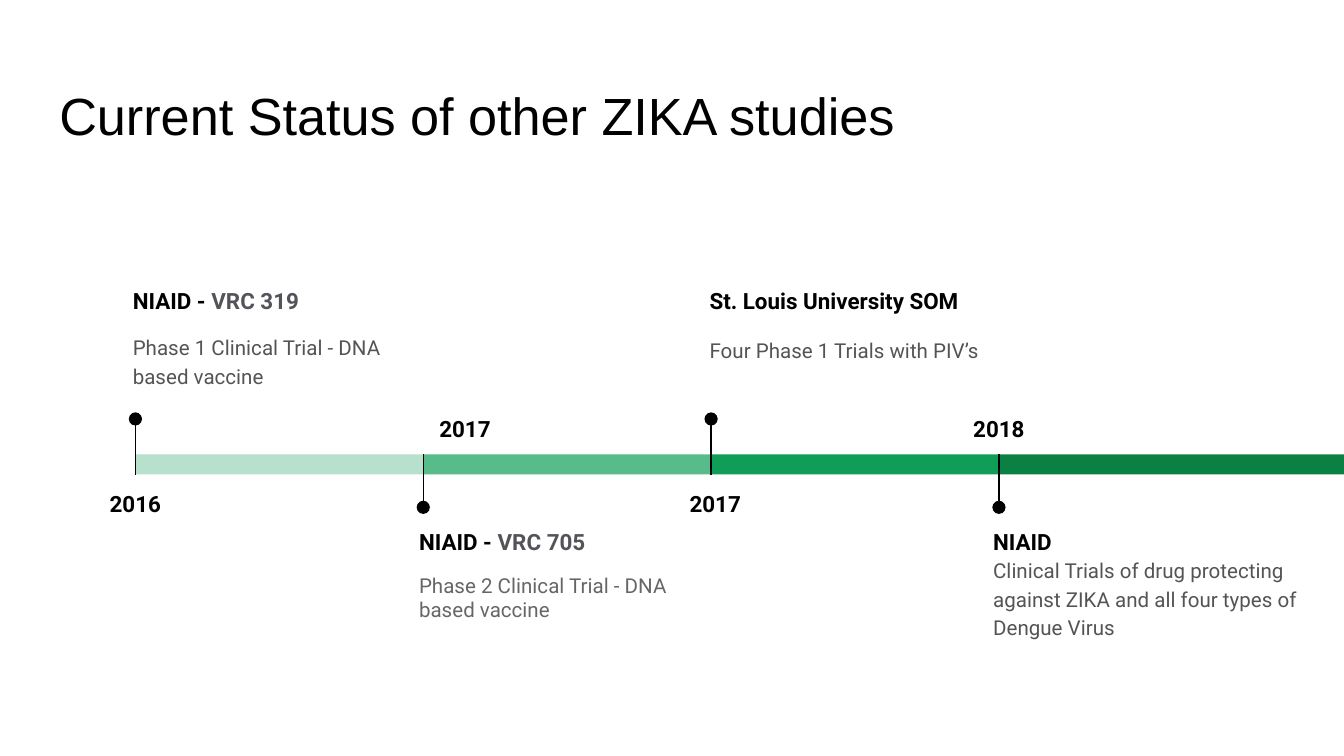
from lxml.etree import SubElement
from pptx import Presentation
from pptx.dml.color import RGBColor
from pptx.enum.shapes import MSO_CONNECTOR, MSO_SHAPE
from pptx.enum.text import MSO_ANCHOR, PP_ALIGN
from pptx.oxml.ns import qn
from pptx.util import Cm, Pt

COLORS = {
    "black": "000000", "study": "545359", "body": "545454", "pale_body": "666666",
    "mint": "B7E1CD", "sage": "57BB8A", "green": "0F9D58", "forest": "0B8043",
}
HEADING = {"name": "Roboto", "size": Pt(12), "bold": True}
BODY = {"name": "Roboto", "size": Pt(11), "bold": False}
YEAR_PARAGRAPH = {"alignment": PP_ALIGN.CENTER, "line_spacing": 1.15, "space_after": Pt(16)}
WIDTH, HEIGHT = 25.4, 14.29
LEFT, STEP = 2.56, 5.44
BAR_TOP, BAR_HEIGHT = 8.59, 0.38
STEM, DOT = 1, 0.25

STAGES = [
    {"color": "mint", "above": True, "year": "2016", "year_shift": 0, "year_width": 2.41,
     "card_shift": -0.3, "card_width": 6.25, "heading": "NIAID - ", "study": "VRC 319",
     "body": "Phase 1 Clinical Trial - DNA based vaccine", "body_color": "body",
     "format": {"line_spacing": 1.15, "space_before": Pt(9.5)}},
    {"color": "sage", "above": False, "year": "2017", "year_shift": 0.79, "year_width": 3.61,
     "card_shift": -0.33, "card_width": 5.66, "heading": "NIAID - ", "study": "VRC 705",
     "body": "Phase 2 Clinical Trial - DNA based vaccine", "body_color": "pale_body",
     "format": {"space_before": Pt(9.5), "space_after": Pt(16)}},
    {"color": "green", "above": True, "year": "2017", "year_shift": 0.08, "year_width": 1.93,
     "card_shift": -0.28, "card_width": 6.25, "heading": "St. Louis University SOM", "study": "",
     "body": "Four Phase 1 Trials with PIV’s", "body_color": "body",
     "format": {"line_spacing": 1.15, "space_before": Pt(11)}},
    {"color": "forest", "above": False, "year": "2018", "year_shift": 0, "year_width": 2.08,
     "card_shift": -0.36, "card_width": 6.25, "heading": "NIAID", "study": "",
     "body": "Clinical Trials of drug protecting against ZIKA and all four types of Dengue Virus",
     "body_color": "body", "format": {"line_spacing": 1.15}},
]


def apply(target, values):
    for name, value in values.items():
        setattr(target, name, value)


def add_run(p, text, color, font):
    r = p.add_run()
    r.text = text
    apply(r.font, font)
    r.font.color.rgb = RGBColor.from_string(COLORS[color])


def format_frame(tf):
    margins = ("margin_left", "margin_top", "margin_right", "margin_bottom")
    apply(tf, {name: Cm(0.25) for name in margins})
    apply(tf, {"word_wrap": True, "vertical_anchor": MSO_ANCHOR.TOP})


def add_text_box(s, box):
    tf = s.shapes.add_textbox(*map(Cm, box)).text_frame
    format_frame(tf)
    return tf


def add_filled(s, kind, box, color):
    sp = s.shapes.add_shape(kind, *map(Cm, box))
    sp.shadow.inherit = False
    sp.fill.solid()
    sp.fill.fore_color.rgb = RGBColor.from_string(COLORS[color])
    sp.line.fill.background()


def add_title(s, box):
    sp = s.shapes.title
    apply(sp, dict(zip(("left", "top", "width", "height"), map(Cm, box))))
    tf = sp.text_frame
    format_frame(tf)
    tf.margin_top = Cm(0.33)
    p = tf.paragraphs[0]
    p.alignment = PP_ALIGN.LEFT
    add_run(p, "Current Status of other ZIKA studies", "black", {"name": "Arial", "size": Pt(28)})


def add_marker(s, x, start, end):
    line = s.shapes.add_connector(MSO_CONNECTOR.STRAIGHT, Cm(x), Cm(start), Cm(x), Cm(end))
    line.line.width = Pt(0.75)
    line.line.color.rgb = RGBColor.from_string(COLORS["black"])
    SubElement(line._element.spPr, qn("a:effectLst"))
    add_filled(s, MSO_SHAPE.OVAL, (x - DOT / 2, end - DOT / 2, DOT, DOT), "black")


def add_year(s, box, year):
    p = add_text_box(s, box).paragraphs[0]
    apply(p, YEAR_PARAGRAPH)
    add_run(p, year, "black", HEADING)


def add_card(s, box, stage):
    tf = add_text_box(s, box)
    p = tf.paragraphs[0]
    add_run(p, stage["heading"], "black", HEADING)
    if stage["study"]:
        add_run(p, stage["study"], "study", HEADING)
    p = tf.add_paragraph()
    apply(p, stage["format"])
    add_run(p, stage["body"], stage["body_color"], BODY)


def add_stage(s, box, stage):
    x, y, width, height = box
    bottom = y + height
    add_filled(s, MSO_SHAPE.RECTANGLE, box, stage["color"])
    if stage["above"]:
        start, end, year_top, card_top = bottom, bottom - STEM - 0.05, 8.94, 5.18
    else:
        start, end, year_top, card_top = y, y + STEM, 7.52, 9.73
    add_marker(s, x, start, end)
    year_left = x + stage["year_shift"] - stage["year_width"] / 2
    add_year(s, (year_left, year_top, stage["year_width"], 1.04), stage["year"])
    add_card(s, (x + stage["card_shift"], card_top, stage["card_width"], 2.62), stage)


def add_timeline(s, box):
    left, top, width, height = box
    for i, stage in enumerate(STAGES):
        x = left + i * STEP
        last = i == len(STAGES) - 1
        add_stage(s, (x, top, left + width - x if last else STEP, height), stage)


def main():
    prs = Presentation()
    apply(prs, {"slide_width": Cm(WIDTH), "slide_height": Cm(HEIGHT)})
    s = prs.slides.add_slide(prs.slide_layouts[5])
    add_title(s, (0.87, 1.24, 23.67, 1.6))
    add_timeline(s, (LEFT, BAR_TOP, WIDTH - LEFT, BAR_HEIGHT))
    prs.save("out.pptx")


if __name__ == "__main__":
    main()
